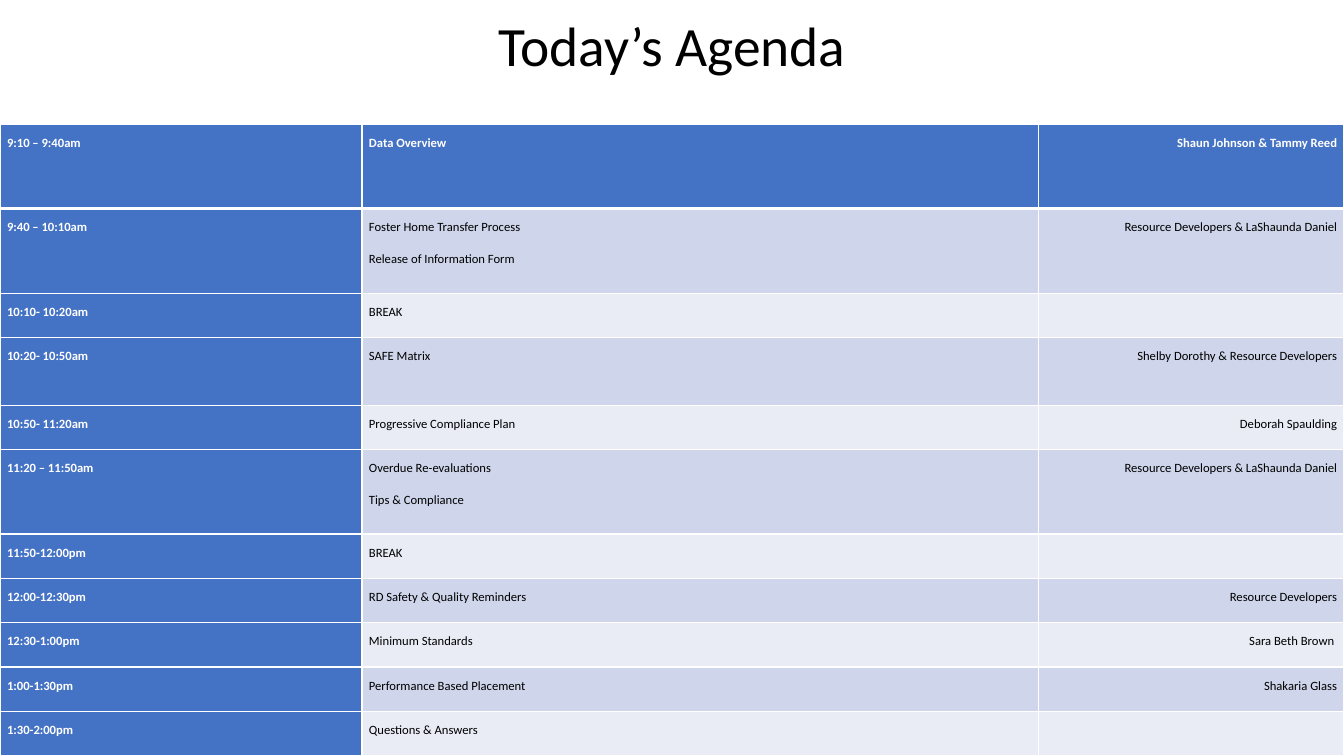
from lxml.etree import SubElement
from pptx import Presentation
from pptx.dml.color import RGBColor
from pptx.enum.text import MSO_ANCHOR as Anchor, PP_ALIGN as Align
from pptx.oxml.ns import qn
from pptx.util import Pt

PX = 9144  # EMU per px, 100 px to the inch
WIDTH, HEIGHT = 1333, 750

WHITE = RGBColor(0xFF, 0xFF, 0xFF)
BLACK = RGBColor(0x00, 0x00, 0x00)
BLUE = RGBColor(0x44, 0x72, 0xC4)
BAND_DARK = RGBColor(0xCF, 0xD5, 0xEA)
BAND_LIGHT = RGBColor(0xE9, 0xEB, 0xF5)

COLUMN_WIDTHS = [359, 671, 303]
TALL, MEDIUM, SHORT = 84, 67, 44

# Row height, time, topics, presenters
AGENDA = [
    (TALL, "9:10 – 9:40am", ["Data Overview"], "Shaun Johnson & Tammy Reed"),
    (TALL, "9:40 – 10:10am",
     ["Foster Home Transfer Process", "Release of Information Form"],
     "Resource Developers & LaShaunda Daniel"),
    (SHORT, "10:10- 10:20am", ["BREAK"], ""),
    (MEDIUM, "10:20- 10:50am", ["SAFE Matrix"],
     "Shelby Dorothy & Resource Developers"),
    (SHORT, "10:50- 11:20am", ["Progressive Compliance Plan"],
     "Deborah Spaulding"),
    (TALL, "11:20 – 11:50am", ["Overdue Re-evaluations", "Tips & Compliance"],
     "Resource Developers & LaShaunda Daniel"),
    (SHORT, "11:50-12:00pm", ["BREAK"], ""),
    (SHORT, "12:00-12:30pm", ["RD Safety & Quality Reminders"],
     "Resource Developers"),
    (SHORT, "12:30-1:00pm", ["Minimum Standards"], "Sara Beth Brown "),
    (SHORT, "1:00-1:30pm", ["Performance Based Placement"], "Shakaria Glass"),
    (SHORT, "1:30-2:00pm", ["Questions & Answers"], ""),
]


class AgendaSlide:
    font = "Calibri"
    title_size, cell_size = 39.6, 9

    def __init__(self, slide):
        self.slide = slide

    def add_run(self, paragraph, text, size, color, bold=False):
        run = paragraph.add_run()
        run.text = text
        run.font.name = self.font
        run.font.size = Pt(size)
        run.font.bold = bold
        run.font.color.rgb = color

    def title(self, text, left, top, width, height):
        box = self.slide.shapes.add_textbox(
            left * PX, top * PX, width * PX, height * PX)
        frame = box.text_frame
        frame.word_wrap = True
        frame.vertical_anchor = Anchor.MIDDLE
        heading = frame.paragraphs[0]
        heading.alignment = Align.CENTER
        heading.line_spacing = 0.9
        self.add_run(heading, text, self.title_size, BLACK)

    def borders(self, cell, bottom_width):
        properties = cell._tc.get_or_add_tcPr()
        for side, width in (("L", 1), ("R", 1), ("T", 1), ("B", bottom_width)):
            line = SubElement(properties, qn(f"a:ln{side}"), w=str(Pt(width)))
            fill = SubElement(line, qn("a:solidFill"))
            SubElement(fill, qn("a:srgbClr"), val=str(WHITE))

    def cell(self, cell, lines, fill, strong, align, bottom_width):
        self.borders(cell, bottom_width)
        cell.fill.solid()
        cell.fill.fore_color.rgb = fill
        cell.margin_left = cell.margin_right = 7 * PX
        cell.margin_top = cell.margin_bottom = 9 * PX
        frame = cell.text_frame
        for index, text in enumerate(lines):
            paragraph = frame.add_paragraph() if index else frame.paragraphs[0]
            paragraph.alignment = align
            paragraph.line_spacing = 1.15
            if index < len(lines) - 1:
                paragraph.space_after = Pt(10)
            if text:
                self.add_run(paragraph, text, self.cell_size,
                             WHITE if strong else BLACK, strong)
            else:  # keeps an empty cell as low as its row
                SubElement(paragraph._p, qn("a:endParaRPr"),
                           sz=str(self.cell_size * 100))

    def agenda(self, sessions, left, top):
        heights = [session[0] for session in sessions]
        table = self.slide.shapes.add_table(
            len(sessions), len(COLUMN_WIDTHS), left * PX, top * PX,
            sum(COLUMN_WIDTHS) * PX, sum(heights) * PX).table
        table.horz_banding = False
        for column, width in zip(table.columns, COLUMN_WIDTHS):
            column.width = width * PX
        for row, (height, time, topics, presenters) in enumerate(sessions):
            table.rows[row].height = height * PX
            band = BAND_DARK if row % 2 else BAND_LIGHT
            for col, lines in enumerate(([time], topics, [presenters])):
                strong = row == 0 or col == 0
                self.cell(table.cell(row, col), lines,
                          BLUE if strong else band, strong,
                          Align.RIGHT if col == 2 else Align.LEFT,
                          bottom_width=1 if row else 3)


def main():
    deck = Presentation()
    deck.slide_width, deck.slide_height = WIDTH * PX, HEIGHT * PX
    page = AgendaSlide(deck.slides.add_slide(deck.slide_layouts[6]))

    # Heading
    page.title("Today’s Agenda", 0, 18, WIDTH, 61)

    # Schedule
    page.agenda(AGENDA, 0, 123)

    deck.save("out.pptx")


if __name__ == "__main__":
    main()
